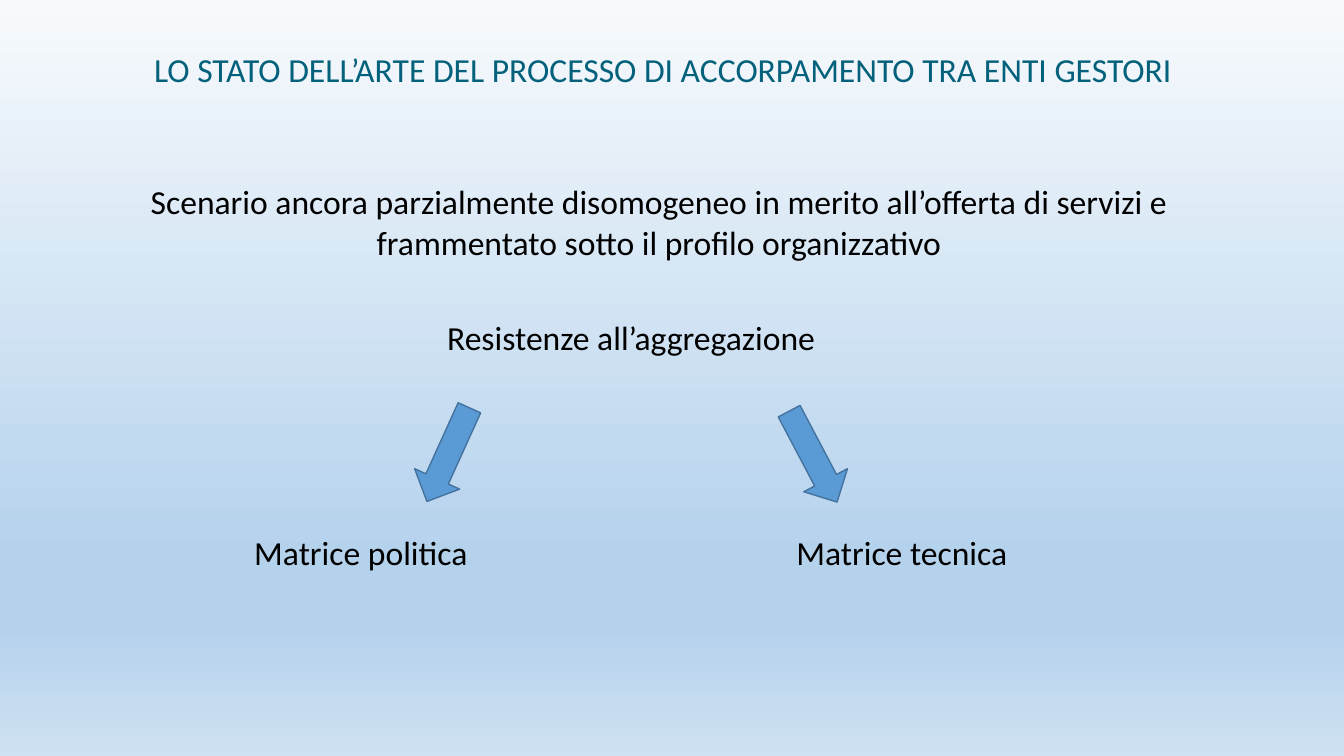
from lxml.etree import SubElement
from pptx import Presentation
from pptx.dml.color import RGBColor
from pptx.enum.shapes import MSO_SHAPE
from pptx.enum.text import MSO_AUTO_SIZE, PP_ALIGN
from pptx.oxml.ns import qn
from pptx.util import Inches, Pt

BLACK = RGBColor(0x00, 0x00, 0x00)
TEAL = RGBColor(0x04, 0x61, 0x7B)
BLUE = RGBColor(0x5B, 0x9B, 0xD5)
NAVY = RGBColor(0x43, 0x73, 0x9E)
PALE = RGBColor(0xF7, 0xFA, 0xFD)
SKY = RGBColor(0xB5, 0xD2, 0xEC)
MIST = RGBColor(0xCE, 0xE1, 0xF2)

STOPS = [(0, PALE), (74, SKY), (83, SKY), (100, MIST)]


def set_background(slide):
    """Fill the background with a gradient that runs from top to bottom."""
    fill = slide.background.fill
    fill.gradient()
    fill.gradient_angle = 270
    stops = slide.element.find(".//" + qn("a:gsLst"))
    for old in list(stops):
        stops.remove(old)
    for percent, color in STOPS:
        stop = SubElement(stops, qn("a:gs"), pos=str(percent * 1000))
        SubElement(stop, qn("a:srgbClr"), val=str(color))


def add_text(slide, text, left, top, width, height=0.5,
             color=BLACK, align=PP_ALIGN.CENTER):
    box = slide.shapes.add_textbox(
        Inches(left), Inches(top), Inches(width), Inches(height))
    frame = box.text_frame
    frame.word_wrap = True
    frame.auto_size = MSO_AUTO_SIZE.SHAPE_TO_FIT_TEXT
    frame.text = text
    line = frame.paragraphs[0]
    line.alignment = align
    font = line.runs[0].font
    font.name = "Calibri"
    font.size = Pt(24)
    font.color.rgb = color


def add_arrow(slide, left, top, angle):
    arrow = slide.shapes.add_shape(
        MSO_SHAPE.DOWN_ARROW,
        Inches(left), Inches(top), Inches(0.49), Inches(1.02))
    arrow.rotation = angle
    arrow.shadow.inherit = False
    arrow.fill.solid()
    arrow.fill.fore_color.rgb = BLUE
    arrow.line.color.rgb = NAVY
    arrow.line.width = Pt(1)


def main():
    deck = Presentation()
    deck.slide_width = Inches(13.33)
    deck.slide_height = Inches(7.5)
    slide = deck.slides.add_slide(deck.slide_layouts[6])
    set_background(slide)

    add_text(slide, "Scenario ancora parzialmente disomogeneo in merito "
             "all’offerta di servizi e frammentato sotto il profilo "
             "organizzativo", 1.23, 1.75, 10.61, 0.91)
    add_text(slide, "Resistenze all’aggregazione", 4.1, 3.09, 4.32)
    add_arrow(slide, 4.2, 4, 24.4)
    add_arrow(slide, 7.82, 4.02, 332.2)
    add_text(slide, "Matrice politica", 2.13, 5.23, 2.9)
    add_text(slide, "Matrice tecnica", 7.46, 5.23, 2.97)
    add_text(slide, "LO STATO DELL’ARTE DEL PROCESSO DI ACCORPAMENTO "
             "TRA ENTI GESTORI", 1.43, 0.44, 10.36,
             color=TEAL, align=PP_ALIGN.LEFT)

    deck.save("out.pptx")


if __name__ == "__main__":
    main()
